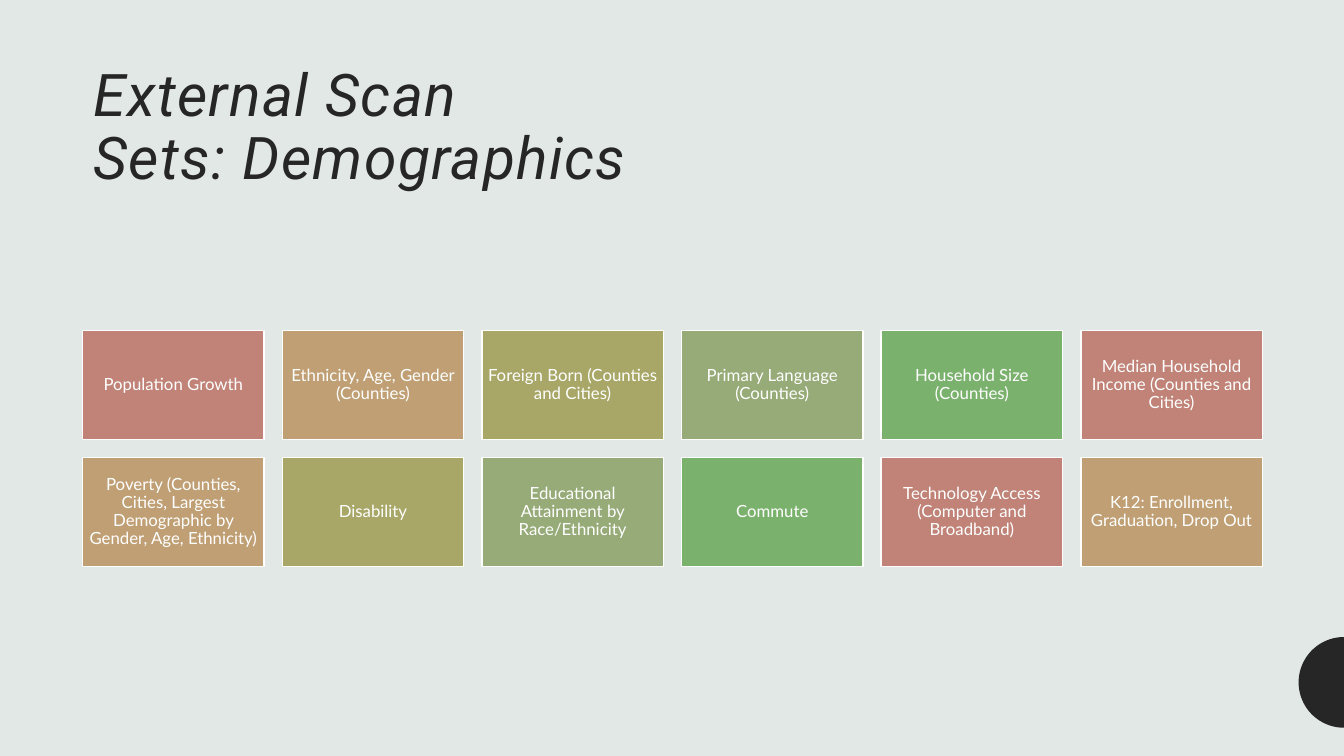
import math
from copy import deepcopy
from pptx import Presentation
from pptx import util as u
from pptx.dml.color import RGBColor
from pptx.enum import shapes, text

BACKGROUND, INK, WHITE = "E2E8E6", "262626", "FFFFFF"
TILE_COLOURS = ["C18377", "C09F74", "A8A768", "96AB78", "7AB16D"]
TITLE_LINES = ["External Scan", "Sets: Demographics"]
TOPICS = [
    "Population Growth",
    "Ethnicity, Age, Gender (Counties)",
    "Foreign Born (Counties and Cities)",
    "Primary Language (Counties)",
    "Household Size (Counties)",
    "Median Household Income (Counties and Cities)",
    "Poverty (Counties, Cities, Largest Demographic by Gender, Age, Ethnicity)",
    "Disability",
    "Educational Attainment by Race/Ethnicity",
    "Commute",
    "Technology Access (Computer and Broadband)",
    "K12: Enrollment, Graduation, Drop Out",
]
COLUMNS = 6
TILE_WIDTH, TILE_HEIGHT, GAP = 1.8, 1.08, 0.18
GRID_LEFT, GRID_TOP = 0.82, 3.28


def colour(hex_string):
    return RGBColor.from_string(hex_string)


class DemographicsSlide:
    title_font = "Roboto"
    body_font = "Lato"

    def __init__(self, presentation):
        self.slide = presentation.slides.add_slide(presentation.slide_layouts[5])
        self.background()

    def background(self):
        fill = self.slide.background.fill
        fill.solid()
        fill.fore_color.rgb = colour(BACKGROUND)

    def add_words(self, paragraph, words, size, font, ink, italic=None):
        run = paragraph.add_run()
        run.text = words
        run.font.size = u.Pt(size)
        run.font.name = font
        run.font.italic = italic
        run.font.color.rgb = colour(ink)
        return run

    def title(self, lines, left, top, width, height):
        heading = self.slide.shapes.title
        heading.left, heading.top = u.Inches(left), u.Inches(top)
        heading.width, heading.height = u.Inches(width), u.Inches(height)
        frame = heading.text_frame
        frame.word_wrap = True
        frame.auto_size = text.MSO_AUTO_SIZE.NONE
        frame.vertical_anchor = text.MSO_ANCHOR.BOTTOM
        paragraph = frame.paragraphs[0]
        paragraph.alignment = text.PP_ALIGN.LEFT
        paragraph.line_spacing = 0.9
        paragraph.space_before = u.Pt(0)
        for number, line in enumerate(lines):
            if number:
                paragraph.add_line_break()
                paragraph._p[-1].append(deepcopy(run._r.rPr))
            run = self.add_words(paragraph, line, 42, self.title_font, INK, True)
            run._r.rPr.set("spc", "100")

    def half_disc(self, centre_x, centre_y, radius, fill):
        steps = 48
        angles = [math.pi / 2 + math.pi * step / steps for step in range(steps + 1)]
        rim = [
            (u.Inches(centre_x + radius * math.cos(angle)),
             u.Inches(centre_y + radius * math.sin(angle)))
            for angle in angles
        ]
        builder = self.slide.shapes.build_freeform(*rim[0])
        builder.add_line_segments(rim[1:], close=True)
        disc = builder.convert_to_shape()
        disc.shadow.inherit = False
        disc.fill.solid()
        disc.fill.fore_color.rgb = colour(fill)
        disc.line.fill.background()

    def tile(self, topic, left, top, fill):
        box = self.slide.shapes.add_shape(
            shapes.MSO_SHAPE.RECTANGLE, u.Inches(left), u.Inches(top),
            u.Inches(TILE_WIDTH), u.Inches(TILE_HEIGHT))
        box.shadow.inherit = False
        box.fill.solid()
        box.fill.fore_color.rgb = colour(fill)
        box.line.color.rgb = colour(WHITE)
        box.line.width = u.Pt(1)
        frame = box.text_frame
        frame.word_wrap = True
        frame.vertical_anchor = text.MSO_ANCHOR.MIDDLE
        frame.margin_left = frame.margin_right = u.Inches(0.05)
        frame.margin_top = frame.margin_bottom = u.Inches(0.05)
        paragraph = frame.paragraphs[0]
        paragraph.alignment = text.PP_ALIGN.CENTER
        paragraph.line_spacing = 0.9
        self.add_words(paragraph, topic, 12, self.body_font, WHITE)


def main():
    presentation = Presentation()
    presentation.slide_width = u.Inches(13.33)
    presentation.slide_height = u.Inches(7.5)
    page = DemographicsSlide(presentation)
    page.title(TITLE_LINES, 0.83, 0.46, 11.67, 1.5)
    page.half_disc(13.33, 6.77, 0.45, INK)
    for index, topic in enumerate(TOPICS):
        row, column = divmod(index, COLUMNS)
        page.tile(
            topic,
            GRID_LEFT + column * (TILE_WIDTH + GAP),
            GRID_TOP + row * (TILE_HEIGHT + GAP),
            TILE_COLOURS[index % len(TILE_COLOURS)])
    presentation.save("out.pptx")


if __name__ == "__main__":
    main()
